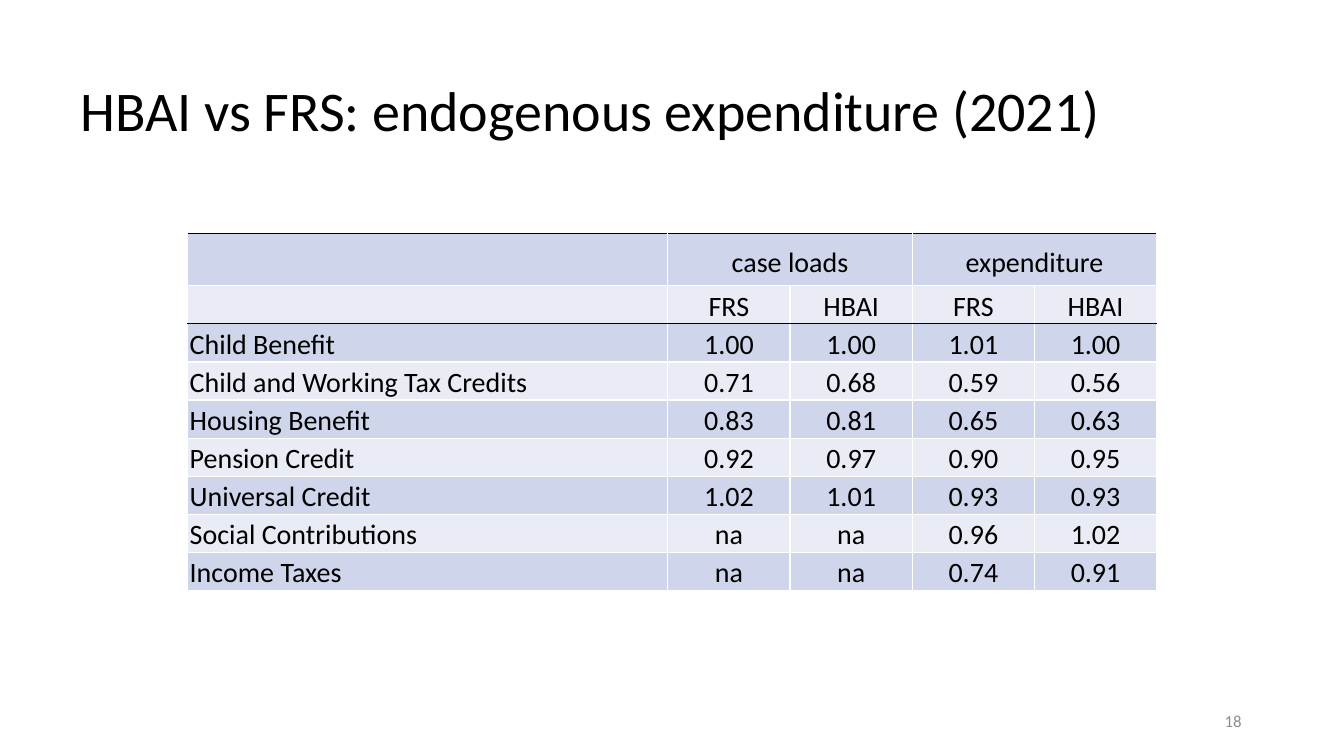
from lxml import etree
from pptx import Presentation
from pptx.dml.color import RGBColor
from pptx.enum.text import MSO_ANCHOR, PP_ALIGN
from pptx.oxml.ns import qn
from pptx.util import Cm, Pt

LEFT, CENTER, RIGHT = PP_ALIGN.LEFT, PP_ALIGN.CENTER, PP_ALIGN.RIGHT
MIDDLE, BOTTOM = MSO_ANCHOR.MIDDLE, MSO_ANCHOR.BOTTOM
BLACK = RGBColor(0x00, 0x00, 0x00)
WHITE = RGBColor(0xFF, 0xFF, 0xFF)
GREY = RGBColor(0x8C, 0x8C, 0x8C)
BANDS = (RGBColor(0xCF, 0xD5, 0xEA), RGBColor(0xE9, 0xEB, 0xF5))

TITLE = "HBAI vs FRS: endogenous expenditure (2021)"
PAGE = "18"
ROWS = [
    ("", "case loads", "", "expenditure", ""),
    ("", "FRS", "HBAI", "FRS", "HBAI"),
    ("Child Benefit", "1.00", "1.00", "1.01", "1.00"),
    ("Child and Working Tax Credits", "0.71", "0.68", "0.59", "0.56"),
    ("Housing Benefit", "0.83", "0.81", "0.65", "0.63"),
    ("Pension Credit", "0.92", "0.97", "0.90", "0.95"),
    ("Universal Credit", "1.02", "1.01", "0.93", "0.93"),
    ("Social Contributions", "na", "na", "0.96", "1.02"),
    ("Income Taxes", "na", "na", "0.74", "0.91"),
]
COL_WIDTHS = [12.1] + [3.08] * 4
ROW_HEIGHTS = [1.31] + [0.96] * 8
HEADER_INSETS = (0.25, 0.13, 0.25, 0.13)
BODY_INSETS = (0.05, 0.05, 0.05, 0)
RULED_ABOVE, RULED_BELOW = (0, 2), (1,)


def write(tf, text, size=20, color=BLACK, align=LEFT, spacing=None):
    p = tf.paragraphs[0]
    p.alignment = align
    p.line_spacing = spacing
    p.font.size = Pt(size)
    if text:
        r = p.add_run()
        r.text = text
        r.font.name = "Calibri"
        r.font.size = Pt(size)
        r.font.color.rgb = color


def add_text(s, box, text, **fmt):
    tf = s.shapes.add_textbox(*map(Cm, box)).text_frame
    tf.word_wrap = True
    tf.vertical_anchor = MIDDLE
    write(tf, text, **fmt)


def set_borders(cell, row):
    colors = {
        "a:lnL": WHITE,
        "a:lnR": WHITE,
        "a:lnT": BLACK if row in RULED_ABOVE else WHITE,
        "a:lnB": BLACK if row in RULED_BELOW else WHITE,
    }
    tcPr = cell._tc.get_or_add_tcPr()
    for tag, color in colors.items():
        ln = etree.SubElement(tcPr, qn(tag), w=str(Pt(1)))
        fill = etree.SubElement(ln, qn("a:solidFill"))
        etree.SubElement(fill, qn("a:srgbClr"), val=str(color))


def add_rates_table(s):
    frame = s.shapes.add_table(len(ROWS), len(COL_WIDTHS), Cm(4.73), Cm(5.89),
                               Cm(sum(COL_WIDTHS)), Cm(sum(ROW_HEIGHTS)))
    table = frame.table
    for column, width in zip(table.columns, COL_WIDTHS):
        column.width = Cm(width)
    for row, height in zip(table.rows, ROW_HEIGHTS):
        row.height = Cm(height)
    for i, row in enumerate(ROWS):
        for j, text in enumerate(row):
            cell = table.cell(i, j)
            insets = BODY_INSETS if i else HEADER_INSETS
            (cell.margin_left, cell.margin_top,
             cell.margin_right, cell.margin_bottom) = map(Cm, insets)
            cell.vertical_anchor = BOTTOM
            set_borders(cell, i)
            cell.fill.solid()
            cell.fill.fore_color.rgb = BANDS[i % 2]
            write(cell.text_frame, text, align=CENTER if j else LEFT)
    for j in (1, 3):
        table.cell(0, j).merge(table.cell(0, j + 1))


def main():
    prs = Presentation()
    prs.slide_width, prs.slide_height = Cm(33.87), Cm(19.05)
    s = prs.slides.add_slide(prs.slide_layouts[6])
    add_text(s, (1.78, 1.02, 29.21, 3.68), TITLE, size=40, spacing=0.9)
    add_rates_table(s)
    add_text(s, (30.3, 17.65, 1.24, 1.02), PAGE, size=12, color=GREY, align=RIGHT)
    prs.save("out.pptx")


if __name__ == "__main__":
    main()
